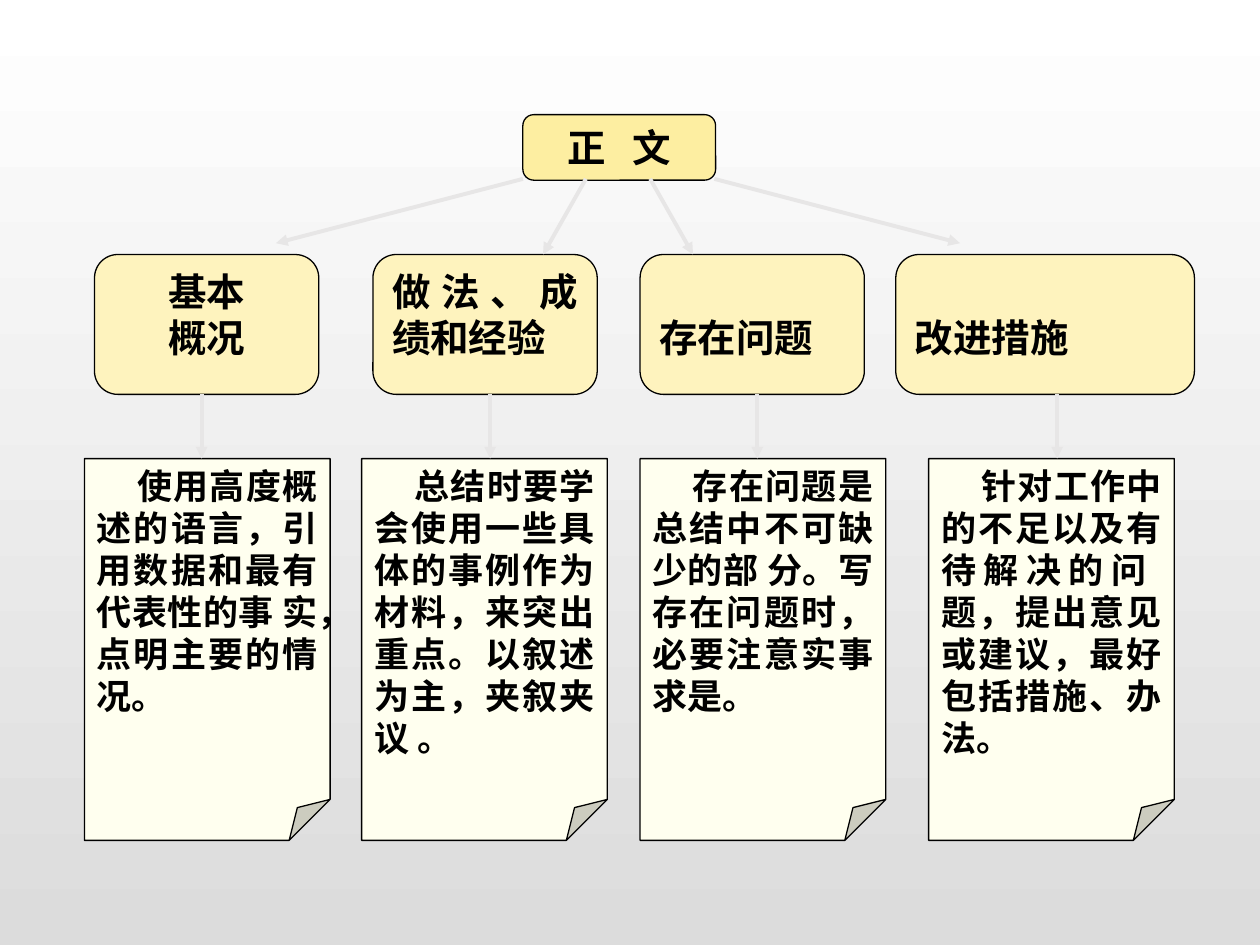
from lxml.etree import SubElement
from pptx import Presentation
from pptx.dml.color import RGBColor
from pptx.enum.shapes import MSO_CONNECTOR, MSO_SHAPE
from pptx.enum.text import MSO_ANCHOR, PP_ALIGN
from pptx.oxml.ns import qn
from pptx.util import Inches, Pt

CJK, LATIN = "Noto Sans CJK SC", "Times New Roman"
TITLE = "正   文"
# heading, its alignment, left, width, top inset; note, its left; arrow x
SECTIONS = [
    ("基本\n概况", PP_ALIGN.CENTER, 0.75, 1.78, 0.05,
     "使用高度概述的语言，引用数据和最有代表性的事 实，点明主要的情况。", 0.67, 1.6),
    ("做法、成绩和经验", PP_ALIGN.JUSTIFY, 2.96, 1.78, 0.05,
     "总结时要学会使用一些具体的事例作为材料，来突出重点。以叙述为主，夹叙夹议 。", 2.87, 3.89),
    ("存在问题", PP_ALIGN.JUSTIFY, 5.08, 1.78, 0.42,
     "存在问题是总结中不可缺少的部 分。写存在问题时，必要注意实事求是。", 5.08, 6.01),
    ("改进措施", PP_ALIGN.JUSTIFY, 7.11, 2.37, 0.42,
     "针对工作中的不足以及有待解决的问  题，提出意见或建议，最好包括措施、办法。", 7.37, 8.39),
]
TITLE_BOTTOM, HEAD_TOP, HEAD_H, NOTE_TOP = 1.42, 2.02, 1.11, 3.64
# start x, end x, end y of the arrows that leave the title
BRANCHES = [(4.15, 2.19, 1.93), (5.67, 7.62, 1.93),
            (4.65, 4.31, HEAD_TOP), (5.16, 5.5, HEAD_TOP)]


def rgb(value):
    return RGBColor.from_string(value)


def add_box(preset, left, top, width, height, fill, text, size, font, align,
            anchor=MSO_ANCHOR.TOP, top_inset=0.05, indent=0):
    box = slide.shapes.add_shape(preset, Inches(left), Inches(top),
                                 Inches(width), Inches(height))
    box.shadow.inherit = False
    box.fill.solid()
    box.fill.fore_color.rgb = rgb(fill)
    box.line.color.rgb = rgb("000000")
    box.line.width = Pt(0.75)
    frame = box.text_frame
    frame.word_wrap = True
    frame.vertical_anchor = anchor
    frame.margin_top = Inches(top_inset)
    frame.text = text
    for paragraph in frame.paragraphs:
        paragraph.alignment = align
        if indent:
            paragraph._p.get_or_add_pPr().set("indent", str(Inches(indent)))
        for run in paragraph.runs:
            run.font.size, run.font.bold, run.font.name = Pt(size), True, font
            run.font.color.rgb = rgb("000000")
            SubElement(run._r.get_or_add_rPr(), qn("a:ea"), typeface=CJK)


def add_arrow(x1, y1, x2, y2):
    arrow = slide.shapes.add_connector(MSO_CONNECTOR.STRAIGHT, Inches(x1), Inches(y1),
                                       Inches(x2), Inches(y2))
    arrow.line.color.rgb = rgb("E7E6E6")
    arrow.line.width = Pt(2.25)
    SubElement(arrow.line._get_or_add_ln(), qn("a:tailEnd"), type="triangle")
    SubElement(arrow._element.spPr, qn("a:effectLst"))


prs = Presentation()
prs.slide_width, prs.slide_height = Inches(10), Inches(7.5)
slide = prs.slides.add_slide(prs.slide_layouts[6])

# Background: white at the top to grey at the bottom
background = slide.background.fill
background.gradient()
background.gradient_angle = 270
for stop, color, position in zip(background.gradient_stops, ("FFFFFF", "DCDCDC"), (0, 1)):
    stop.color.rgb = rgb(color)
    stop.position = position

# Title
add_box(MSO_SHAPE.ROUNDED_RECTANGLE, 4.15, 0.91, 1.53, 0.52, "FDEEA1", TITLE, 22,
        LATIN, PP_ALIGN.CENTER, MSO_ANCHOR.MIDDLE)

# Headings and the notes below them
for heading, align, left, width, inset, note, note_left, arrow_x in SECTIONS:
    add_box(MSO_SHAPE.ROUNDED_RECTANGLE, left, HEAD_TOP, width, HEAD_H, "FEF3BE",
            heading, 22, CJK, align, top_inset=inset)
    add_box(MSO_SHAPE.FOLDED_CORNER, note_left, NOTE_TOP, 1.95, 3.03, "FFFFEF",
            note, 20, LATIN, PP_ALIGN.JUSTIFY, indent=0.32)
    add_arrow(arrow_x, HEAD_TOP + HEAD_H, arrow_x, NOTE_TOP)

# Arrows from the title
for start_x, end_x, end_y in BRANCHES:
    add_arrow(start_x, TITLE_BOTTOM, end_x, end_y)

prs.save("out.pptx")
